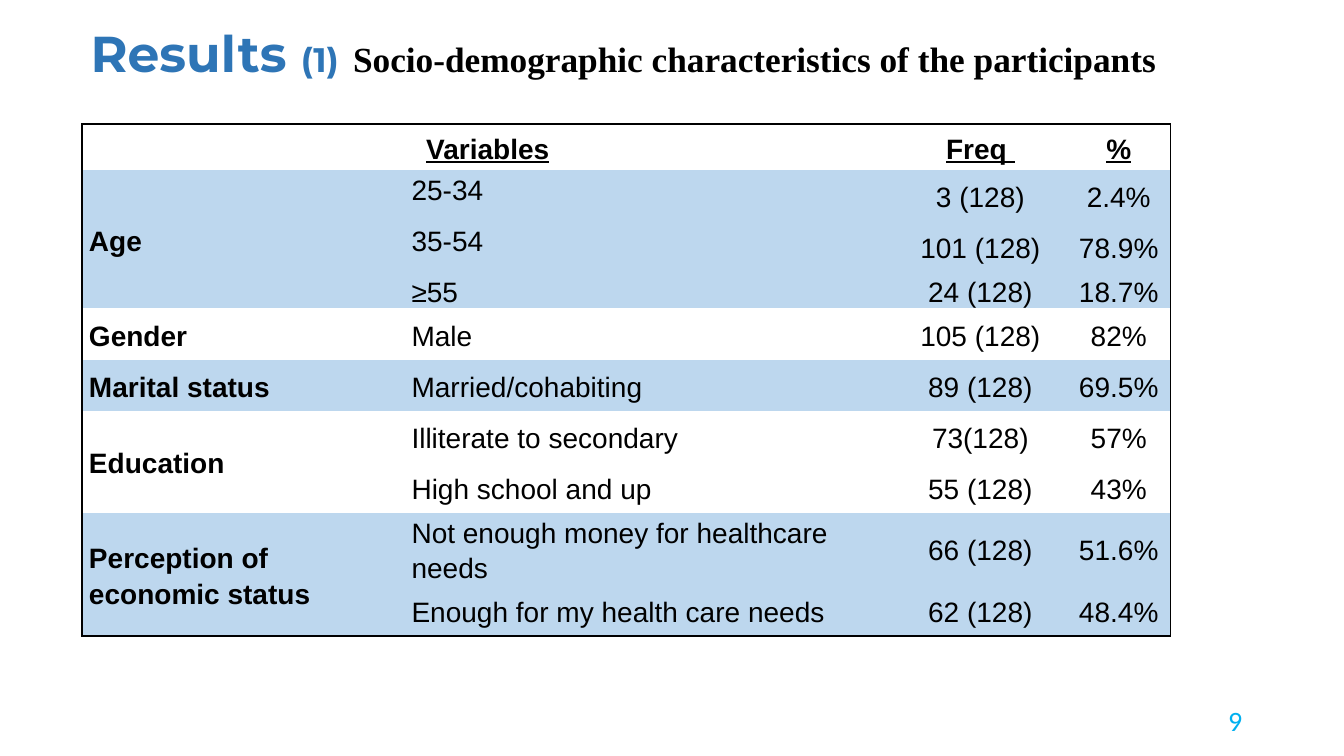
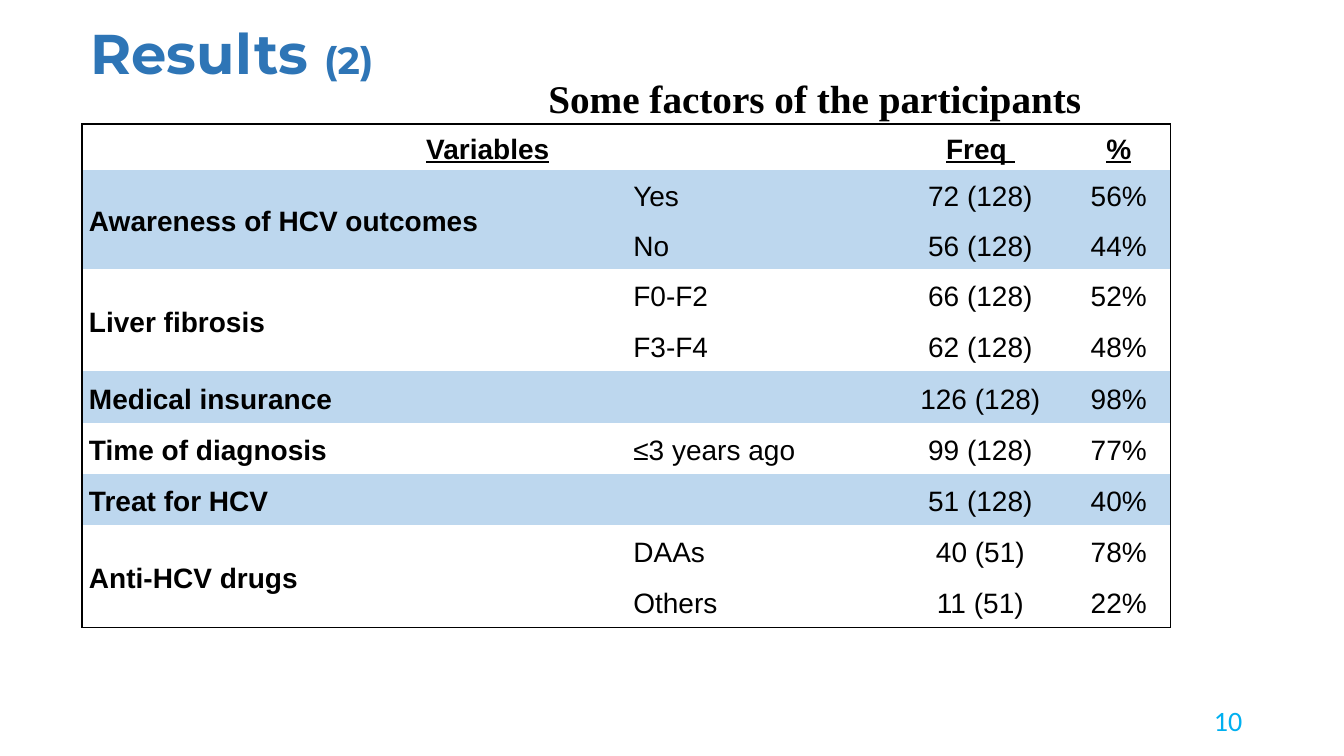
from dataclasses import dataclass

from lxml import etree
from pptx import Presentation
from pptx.dml.color import RGBColor
from pptx.enum.text import MSO_ANCHOR, PP_ALIGN
from pptx.oxml.ns import qn
from pptx.util import Inches, Pt

LEFT, CENTER, RIGHT = PP_ALIGN.LEFT, PP_ALIGN.CENTER, PP_ALIGN.RIGHT
TOP, MIDDLE = MSO_ANCHOR.TOP, MSO_ANCHOR.MIDDLE

SLIDE_WIDTH, SLIDE_HEIGHT = Inches(13.33), Inches(7.5)
COLORS = {"title": "2E75B6", "text": "000000", "band": "BDD7EE",
          "paper": "FFFFFF", "number": "00B0F0"}
TITLE_FONT, SUBTITLE_FONT = "Montserrat", "Times New Roman"
TABLE_FONT, NUMBER_FONT = "Arial", "Calibri"
TITLE_SPACING, TABLE_SPACING = 0.9, 1.15
CELL_INSET = Inches(0.07)
HEADINGS = ("Variables", "", "Freq ", "%")


@dataclass(frozen=True)
class Box:
    """A place, in percent of the slide's width and height."""
    left: float
    top: float
    width: float
    height: float


@dataclass(frozen=True)
class Entry:
    category: str
    frequency: str
    percent: str
    height: float = 6.77


@dataclass(frozen=True)
class Group:
    label: str
    entries: tuple[Entry, ...]
    category_anchor: MSO_ANCHOR = MIDDLE


@dataclass(frozen=True)
class ResultSlide:
    number: int
    page: int
    title_size: float
    title_box: Box
    subtitle: str
    subtitle_size: float
    subtitle_box: Box | None  # None continues the title line
    label_width: float
    groups: tuple[Group, ...]


PAGE_BOX = Box(70.67, 92.67, 22.5, 5.33)
TABLE_LEFT, TABLE_TOP, TABLE_WIDTH = 6.1, 16.4, 81
FREQUENCY_WIDTH, PERCENT_WIDTH = 12.9, 7.7
HEADER_HEIGHT = 6.1

RESULTS = (
    ResultSlide(
        1, 9, 36, Box(6, 1.6, 86.25, 11.73),
        "Socio-demographic characteristics of the participants", 25.2, None, 24,
        (
            Group("Age", (
                Entry("25-34", "3 (128)", "2.4%"),
                Entry("35-54", "101 (128)", "78.9%"),
                Entry("≥55", "24 (128)", "18.7%", 4.53),
            ), TOP),
            Group("Gender", (Entry("Male", "105 (128)", "82%"),)),
            Group("Marital status", (Entry("Married/cohabiting", "89 (128)", "69.5%"),)),
            Group("Education", (
                Entry("Illiterate to secondary", "73(128)", "57%"),
                Entry("High school and up", "55 (128)", "43%"),
            )),
            Group("Perception of economic status", (
                Entry("Not enough money for healthcare needs", "66 (128)", "51.6%"),
                Entry("Enough for my health care needs", "62 (128)", "48.4%"),
            )),
        )),
    ResultSlide(
        2, 10, 40, Box(6, 1.6, 24.4, 11.73),
        "Some factors of the participants", 28, Box(40.06, 7.47, 47.2, 11.73), 40.5,
        (
            Group("Awareness of HCV outcomes", (
                Entry("Yes", "72 (128)", "56%", 6.55),
                Entry("No", "56 (128)", "44%", 6.55),
            )),
            Group("Liver fibrosis", (
                Entry("F0-F2", "66 (128)", "52%"),
                Entry("F3-F4", "62 (128)", "48%"),
            )),
            Group("Medical insurance", (Entry("", "126 (128)", "98%"),)),
            Group("Time of diagnosis", (Entry("≤3 years ago", "99 (128)", "77%"),)),
            Group("Treat for HCV", (Entry("", "51 (128)", "40%"),)),
            Group("Anti-HCV drugs", (
                Entry("DAAs", "40 (51)", "78%"),
                Entry("Others", "11 (51)", "22%"),
            )),
        )),
)


def across(percent: float) -> int:
    return round(SLIDE_WIDTH * percent / 100)


def down(percent: float) -> int:
    return round(SLIDE_HEIGHT * percent / 100)


def write(paragraph, text: str, *, size: float = 20, font: str = TABLE_FONT,
          color: str = "text", bold: bool = False, underline: bool = False,
          align: PP_ALIGN = LEFT, spacing: float = 1.0) -> None:
    """Append one run to the paragraph and set the format of both."""
    paragraph.alignment = align
    paragraph.line_spacing = spacing
    run = paragraph.add_run()
    run.text = text
    run.font.size = Pt(size)
    run.font.name = font
    run.font.bold = bold
    run.font.underline = underline
    run.font.color.rgb = RGBColor.from_string(COLORS[color])


def add_text_box(slide, box: Box):
    """Add an empty text box and return its paragraph."""
    shape = slide.shapes.add_textbox(across(box.left), down(box.top),
                                     across(box.width), down(box.height))
    shape.text_frame.word_wrap = True
    shape.text_frame.vertical_anchor = MIDDLE
    return shape.text_frame.paragraphs[0]


def add_titles(slide, result: ResultSlide) -> None:
    title = add_text_box(slide, result.title_box)
    style = dict(font=TITLE_FONT, color="title", bold=True, spacing=TITLE_SPACING)
    write(title, "Results ", size=result.title_size, **style)
    write(title, f"({result.number})", size=result.title_size * 0.675, **style)
    if result.subtitle_box:
        subtitle = add_text_box(slide, result.subtitle_box)
    else:
        subtitle = title
        write(title, " ", size=result.title_size, **style)
    write(subtitle, result.subtitle, size=result.subtitle_size, font=SUBTITLE_FONT,
          bold=True, spacing=TITLE_SPACING)


def set_borders(cell, outer_edges: dict[str, bool]) -> None:
    """Draw a thin line on the outer edges and none on the others."""
    properties = cell._tc.get_or_add_tcPr()
    for edge, is_outer in outer_edges.items():
        line = etree.SubElement(properties, qn(f"a:ln{edge}"), w=str(Pt(1)))
        if is_outer:
            fill = etree.SubElement(line, qn("a:solidFill"))
            etree.SubElement(fill, qn("a:srgbClr"), val=COLORS["text"])
        else:
            etree.SubElement(line, qn("a:noFill"))


def style_cells(table, row_colors: list[str]) -> None:
    last_row, last_column = len(table.rows) - 1, len(table.columns) - 1
    for row, color in enumerate(row_colors):
        for column in range(last_column + 1):
            cell = table.cell(row, column)
            bottom_row = row + (cell.span_height if cell.is_merge_origin else 1) - 1
            set_borders(cell, {"L": column == 0, "R": column == last_column,
                               "T": row == 0, "B": bottom_row == last_row})
            cell.fill.solid()
            cell.fill.fore_color.rgb = RGBColor.from_string(COLORS[color])
            cell.margin_left = cell.margin_right = CELL_INSET
            cell.margin_top = cell.margin_bottom = 0
            cell.vertical_anchor = MIDDLE


def write_cell(cell, text: str, **text_format) -> None:
    if text:
        write(cell.text_frame.paragraphs[0], text, spacing=TABLE_SPACING, **text_format)


def add_result_table(slide, result: ResultSlide) -> None:
    entries = [entry for group in result.groups for entry in group.entries]
    heights = [HEADER_HEIGHT] + [entry.height for entry in entries]
    category_width = TABLE_WIDTH - result.label_width - FREQUENCY_WIDTH - PERCENT_WIDTH
    widths = (result.label_width, category_width, FREQUENCY_WIDTH, PERCENT_WIDTH)
    table = slide.shapes.add_table(
        len(heights), len(widths), across(TABLE_LEFT), down(TABLE_TOP),
        across(TABLE_WIDTH), down(sum(heights))).table
    table.first_row = table.horz_banding = False
    for column, width in zip(table.columns, widths):
        column.width = across(width)
    for row, height in zip(table.rows, heights):
        row.height = down(height)

    table.cell(0, 0).merge(table.cell(0, 1))
    row_colors = ["paper"]
    for index, group in enumerate(result.groups):
        first, count = len(row_colors), len(group.entries)
        if count > 1:
            table.cell(first, 0).merge(table.cell(first + count - 1, 0))
        row_colors += ["paper" if index % 2 else "band"] * count
    style_cells(table, row_colors)

    for column, heading in enumerate(HEADINGS):
        write_cell(table.cell(0, column), heading, bold=True, underline=True, align=CENTER)
    row = 1
    for group in result.groups:
        write_cell(table.cell(row, 0), group.label, bold=True)
        for entry in group.entries:
            table.cell(row, 1).vertical_anchor = group.category_anchor
            write_cell(table.cell(row, 1), entry.category)
            write_cell(table.cell(row, 2), entry.frequency, align=CENTER)
            write_cell(table.cell(row, 3), entry.percent, align=CENTER)
            row += 1


def main() -> None:
    presentation = Presentation()
    presentation.slide_width, presentation.slide_height = SLIDE_WIDTH, SLIDE_HEIGHT
    blank_layout = presentation.slide_layouts[6]
    for result in RESULTS:
        slide = presentation.slides.add_slide(blank_layout)
        add_result_table(slide, result)
        add_titles(slide, result)
        write(add_text_box(slide, PAGE_BOX), str(result.page),
              font=NUMBER_FONT, color="number", align=RIGHT)
    presentation.save("out.pptx")


if __name__ == "__main__":
    main()
